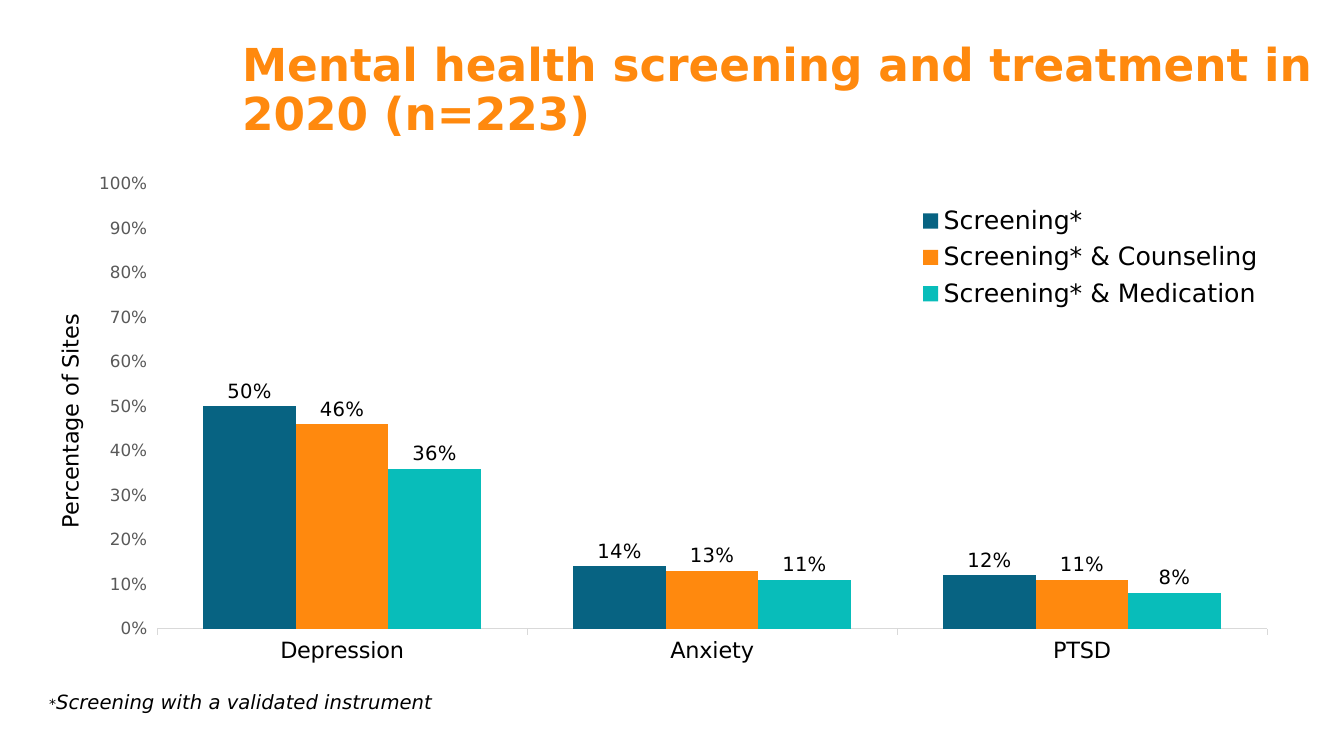
from pptx import Presentation
from pptx.chart.data import CategoryChartData
from pptx.dml.color import RGBColor
from pptx.enum.chart import (XL_CHART_TYPE, XL_LABEL_POSITION as LabelPos,
                             XL_LEGEND_POSITION as LegendPos, XL_TICK_MARK as Tick)
from pptx.enum.shapes import MSO_SHAPE
from pptx.enum.text import MSO_ANCHOR, MSO_AUTO_SIZE, PP_ALIGN
from pptx.oxml import parse_xml
from pptx.oxml.ns import nsdecls
from pptx.util import Cm, Pt

FONT = "DejaVu Sans"
COLORS = {"navy": "076382", "orange": "FF890E", "teal": "08BDBA", "black": "000000",
          "white": "FFFFFF", "gray": "595959", "axis": "D9D9D9"}
CONDITIONS = ["Depression", "Anxiety", "PTSD"]
SERIES = [("Screening*", (0.5, 0.14, 0.12), "navy"),
          ("Screening* & Counseling", (0.46, 0.13, 0.11), "orange"),
          ("Screening* & Medication", (0.36, 0.11, 0.08), "teal")]


def rgb(name):
    """Return the named colour."""
    return RGBColor.from_string(COLORS[name])


def set_font(font, size, color="black", bold=False, italic=False):
    """Format a font."""
    font.name, font.size, font.bold, font.italic = FONT, Pt(size), bold, italic
    font.color.rgb = rgb(color)


def set_layout(element, index, x, y, w=None, h=None, inner=False):
    """Place a chart part by fractions of the chart's size."""
    for old in element.xpath("c:layout"):
        element.remove(old)
    tags = [("layoutTarget", "inner")] if inner else []
    tags += [("xMode", "edge"), ("yMode", "edge"), ("x", x), ("y", y)]
    if w is not None:
        tags += [("w", w), ("h", h)]
    body = "".join(f'<c:{tag} val="{val}"/>' for tag, val in tags)
    element.insert(index, parse_xml(
        f'<c:layout {nsdecls("c")}><c:manualLayout>{body}</c:manualLayout></c:layout>'))


def add_title(s, left, top, width, height):
    """Fill and place the slide title."""
    title = s.shapes.title
    title.left, title.top, title.width, title.height = left, top, width, height
    tf = title.text_frame
    tf.margin_left = tf.margin_right = tf.margin_top = tf.margin_bottom = 0
    tf.word_wrap, tf.auto_size = True, MSO_AUTO_SIZE.NONE
    tf.vertical_anchor = MSO_ANCHOR.TOP
    p = tf.paragraphs[0]
    p.text = "Mental health screening and treatment in 2020 (n=223)"
    p.alignment, p.line_spacing = PP_ALIGN.LEFT, 0.9
    set_font(p.font, 32.4, "orange", bold=True)


def format_axes(chart):
    """Format the condition axis and the percentage axis."""
    cat, val = chart.category_axis, chart.value_axis
    cat.major_tick_mark = val.major_tick_mark = Tick.OUTSIDE
    cat.format.line.color.rgb = rgb("axis")
    cat.format.line.width = Pt(0.75)
    set_font(cat.tick_labels.font, 16)
    val.minimum_scale, val.maximum_scale, val.major_unit = 0, 1, 0.1
    val.has_major_gridlines = False
    val.format.line.fill.background()
    val.tick_labels.number_format = "0%"
    val.tick_labels.number_format_is_linked = False
    set_font(val.tick_labels.font, 12, "gray")
    p = val.axis_title.text_frame.paragraphs[0]
    p.text = "Percentage of Sites"
    set_font(p.font, 16)


def add_screening_chart(s, left, top, width, height):
    """Add the clustered columns of screening and treatment shares."""
    data = CategoryChartData(number_format="0%")
    data.categories = CONDITIONS
    for name, values, _ in SERIES:
        data.add_series(name, values)
    chart = s.shapes.add_chart(XL_CHART_TYPE.COLUMN_CLUSTERED, left, top, width, height,
                               data).chart
    chart.has_title = False
    set_font(chart.font, 14)
    format_axes(chart)
    plot = chart.plots[0]
    plot.gap_width, plot.overlap, plot.vary_by_categories = 100, 0, False
    for series, (_, _, color) in zip(plot.series, SERIES):
        series.format.fill.solid()
        series.format.fill.fore_color.rgb = rgb(color)
        labels = series.data_labels
        labels.show_value, labels.position = True, LabelPos.OUTSIDE_END
        labels.number_format, labels.number_format_is_linked = "0%", False
        set_font(labels.font, 14)
    chart.has_legend = True
    chart.legend.position = LegendPos.RIGHT
    chart.legend.include_in_layout = False
    set_font(chart.legend.font, 18)

    root = chart.element
    title = root.xpath(".//c:valAx/c:title")[0]
    title.xpath(".//a:bodyPr")[0].set("rot", "-5400000")
    set_layout(title, 1, 0.006, 0.29)
    set_layout(root.xpath(".//c:plotArea")[0], 0, 0.09, 0.051, 0.886, 0.842, inner=True)
    set_layout(root.xpath(".//c:legend")[0], 1, 0.7, 0.08, 0.27, 0.22)


def add_footnote(s, left, top, width, height):
    """Add the note on screening below the chart."""
    sp = s.shapes.add_shape(MSO_SHAPE.RECTANGLE, left, top, width, height)
    sp.shadow.inherit = False
    sp.fill.solid()
    sp.fill.fore_color.rgb = rgb("white")
    sp.line.fill.background()
    tf = sp.text_frame
    tf.word_wrap, tf.vertical_anchor = True, MSO_ANCHOR.TOP
    p = tf.paragraphs[0]
    p.alignment = PP_ALIGN.LEFT
    for text, size in (("*", 10), ("Screening with a validated instrument", 14)):
        r = p.add_run()
        r.text = text
        set_font(r.font, size, italic=True)


def main():
    """Build and save the slide."""
    prs = Presentation()
    prs.slide_width, prs.slide_height = Cm(33.87), Cm(19.05)
    s = prs.slides.add_slide(prs.slide_layouts[5])
    add_title(s, Cm(6.1), Cm(1.07), Cm(27.77), Cm(1.98))
    add_screening_chart(s, Cm(1.12), Cm(3.96), Cm(31.57), Cm(13.31))
    add_footnote(s, Cm(0.99), Cm(17.27), Cm(21.62), Cm(1.63))
    prs.save("out.pptx")


if __name__ == "__main__":
    main()
